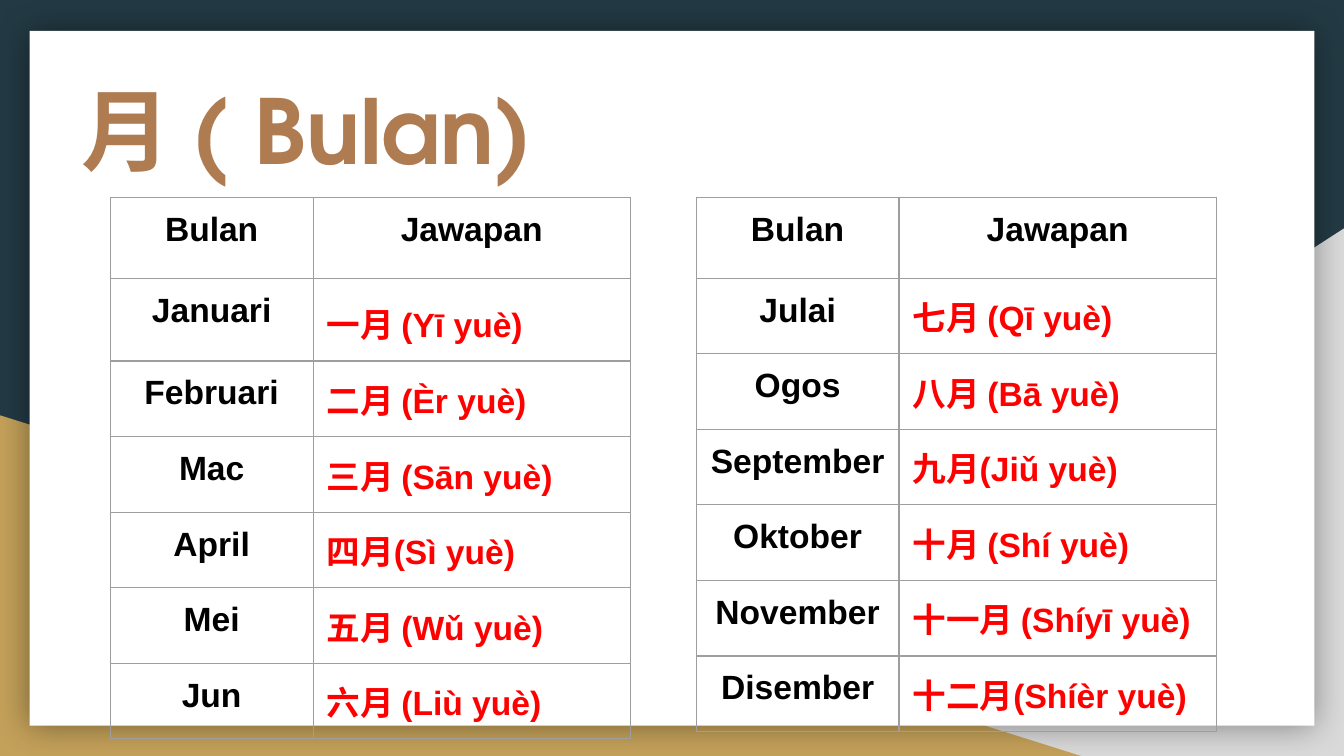
import dataclasses

import pptx
import pptx.dml.color
import pptx.enum.shapes
import pptx.enum.text
import pptx.oxml
import pptx.oxml.ns
import pptx.util
from pptx.util import Inches

SHAPE = pptx.enum.shapes.MSO_SHAPE
ALIGN = pptx.enum.text.PP_ALIGN
NS = pptx.oxml.ns.nsdecls("a")


@dataclasses.dataclass(frozen=True)
class Theme:
    night: str = "233A44"
    grey: str = "D9D9D9"
    gold: str = "C4A15A"
    white: str = "FFFFFF"
    brown: str = "AF7B51"
    black: str = "000000"
    red: str = "FF0000"
    rule: str = "9E9E9E"
    head: str = "TeX Gyre Adventor"
    body: str = "Arial"
    big: int = 48
    text: int = 18


THEME = Theme()

WIDTHS = (1.51, 2.36)
HEIGHTS = (0.6, 0.45, 0.42, 0.49, 0.52, 0.46, 0.49)
HEADER = ("Bulan", "Jawapan")

# Month, Chinese part, reading
FIRST = (
    ("Januari", "一月 (", "Yī yuè)"),
    ("Februari", "二月 (", "Èr yuè)"),
    ("Mac", "三月 (", "Sān yuè)"),
    ("April", "四月(", "Sì yuè)"),
    ("Mei", "五月 (", "Wǔ yuè)"),
    ("Jun", "六月 (", "Liù yuè)"),
)
SECOND = (
    ("Julai", "七月 (", "Qī yuè)"),
    ("Ogos", "八月 (", "Bā yuè)"),
    ("September", "九月(", "Jiǔ yuè)"),
    ("Oktober", "十月 (", "Shí yuè)"),
    ("November", "十一月 (", "Shíyī yuè)"),
    ("Disember", "十二月(", "Shíèr yuè)"),
)


def color(code):
    return pptx.dml.color.RGBColor.from_string(code)


def add_run(para, text, tint, size=THEME.text, face=THEME.body, mark=None):
    run = para.add_run()
    run.text = text
    font = run.font
    font.size = pptx.util.Pt(size)
    font.bold = True
    font.color.rgb = color(tint)
    font.name = face
    if mark:
        latin = font._element.find(pptx.oxml.ns.qn("a:latin"))
        latin.addprevious(pptx.oxml.parse_xml(
            f'<a:highlight {NS}><a:srgbClr val="{mark}"/></a:highlight>'))


def add_block(slide, kind, box, fill):
    shape = slide.shapes.add_shape(kind, *map(Inches, box))
    shape.shadow.inherit = False
    shape.fill.solid()
    shape.fill.fore_color.rgb = color(fill)
    shape.line.fill.background()
    return shape


def add_glow(shape):
    effects = shape.element.spPr.find(pptx.oxml.ns.qn("a:effectLst"))
    effects.append(pptx.oxml.parse_xml(
        f'<a:outerShdw {NS} blurRad="{pptx.util.Pt(18)}" dist="0" dir="0" '
        f'algn="ctr" rotWithShape="0"><a:srgbClr val="{THEME.black}">'
        '<a:alpha val="40000"/></a:srgbClr></a:outerShdw>'))


def set_inset(frame):
    frame.margin_left = frame.margin_right = Inches(0.1)
    frame.margin_top = frame.margin_bottom = Inches(0.1)


def add_title(slide):
    title = slide.shapes.title
    title.left, title.top = Inches(0.23), Inches(0.22)
    title.width, title.height = Inches(4.11), Inches(1.48)
    frame = title.text_frame
    set_inset(frame)
    frame.word_wrap = True
    frame.auto_size = pptx.enum.text.MSO_AUTO_SIZE.NONE
    frame.vertical_anchor = pptx.enum.text.MSO_ANCHOR.MIDDLE
    para = frame.paragraphs[0]
    para.alignment = ALIGN.CENTER
    add_run(para, "月 ( Bulan)", THEME.brown, THEME.big, THEME.head)
    # Bring the title in front of the backdrop
    slide.shapes.element.append(title.element)


def style_cell(cell):
    set_inset(cell)
    cell.fill.background()
    props = cell._tc.get_or_add_tcPr()
    for spot, side in enumerate("LRTB"):
        props.insert(spot, pptx.oxml.parse_xml(
            f'<a:ln{side} {NS} w="{pptx.util.Pt(0.75)}"><a:solidFill>'
            f'<a:srgbClr val="{THEME.rule}"/></a:solidFill></a:ln{side}>'))


def add_label(cell, text):
    para = cell.text_frame.paragraphs[0]
    para.alignment = ALIGN.CENTER
    add_run(para, text, THEME.black)


def add_table(slide, left, height, months):
    frame = slide.shapes.add_table(
        len(HEIGHTS), len(WIDTHS), Inches(left), Inches(1.47),
        Inches(sum(WIDTHS)), Inches(height))
    table = frame.table
    table.first_row = table.horz_banding = False
    for col, width in zip(table.columns, WIDTHS):
        col.width = Inches(width)
    for row, least in zip(table.rows, HEIGHTS):
        row.height = Inches(least)
    frame.height = Inches(height)
    for cell in table.iter_cells():
        style_cell(cell)
    for col, text in enumerate(HEADER):
        add_label(table.cell(0, col), text)
    for row, (month, sign, sound) in enumerate(months, 1):
        add_label(table.cell(row, 0), month)
        para = table.cell(row, 1).text_frame.paragraphs[0]
        para.alignment = ALIGN.LEFT
        add_run(para, sign, THEME.red)
        add_run(para, sound, THEME.red, mark=THEME.white)
    return table


def main():
    deck = pptx.Presentation()
    deck.slide_width = Inches(10)
    deck.slide_height = deck.slide_width * 9 // 16
    slide = deck.slides.add_slide(deck.slide_layouts[5])

    # Backdrop
    back = slide.background.fill
    back.solid()
    back.fore_color.rgb = color(THEME.night)
    wedge = add_block(slide, SHAPE.RIGHT_TRIANGLE,
                      (3.92, 1.7, 6.08, 3.93), THEME.grey)
    wedge.element.spPr.xfrm.set("flipH", "1")
    add_block(slide, SHAPE.RIGHT_TRIANGLE, (0, 3.09, 8.06, 2.54), THEME.gold)
    panel = add_block(slide, SHAPE.RECTANGLE,
                      (0.22, 0.23, 9.56, 5.17), THEME.white)
    add_glow(panel)

    # Title and month tables
    add_title(slide)
    table = add_table(slide, 0.82, 3.66, FIRST)
    table.cell(1, 1).text_frame.paragraphs[0].line_spacing = 1.15
    add_table(slide, 5.18, 3.62, SECOND)

    deck.save("out.pptx")


if __name__ == "__main__":
    main()
